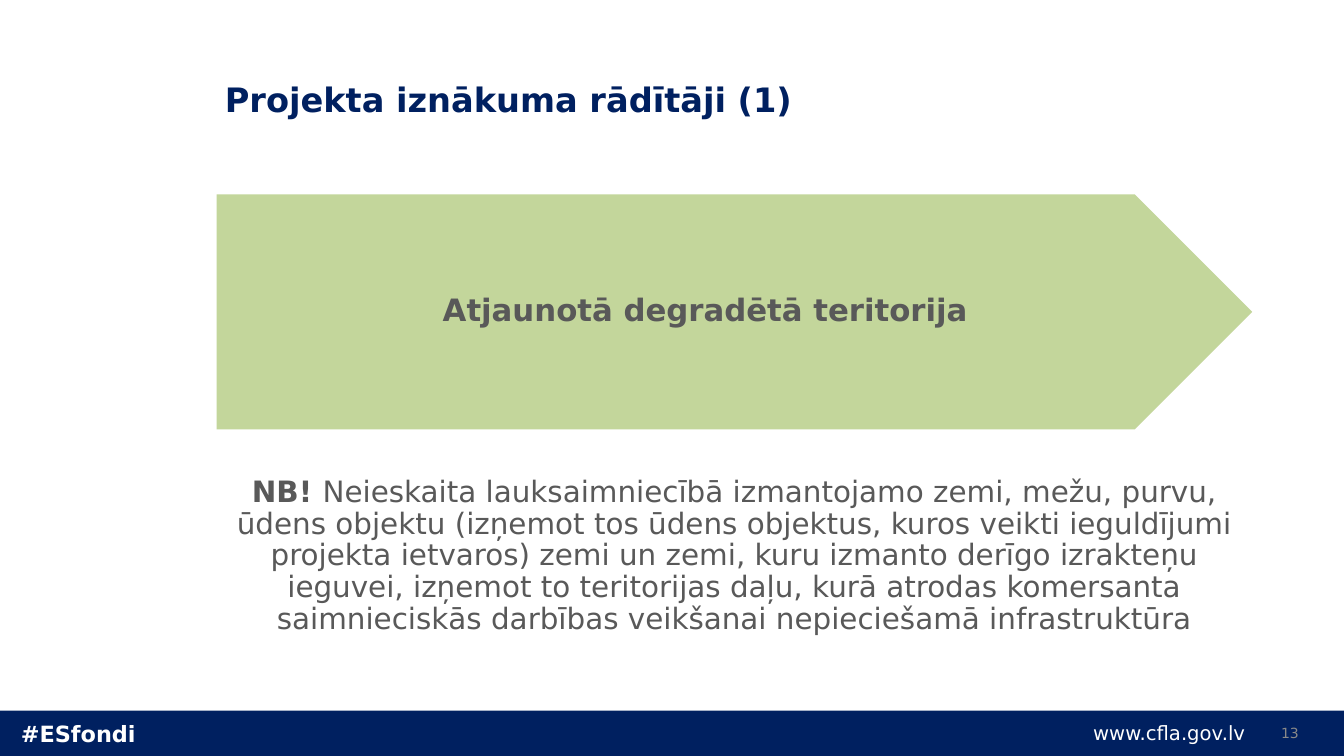
"""Build the slide on the project's output indicators."""
from dataclasses import dataclass

from pptx import Presentation
from pptx.dml.color import RGBColor
from pptx.enum.shapes import MSO_SHAPE as Shape
from pptx.enum.text import MSO_ANCHOR as Anchor, MSO_AUTO_SIZE as AutoSize, PP_ALIGN as Align
from pptx.util import Inches, Pt

FONT = "DejaVu Sans"
NAVY, GREEN, WHITE = "002060", "C3D69B", "FFFFFF"
DARK_GREY, LIGHT_GREY = "595959", "898989"
NOTE = (
    "Neieskaita lauksaimniecībā izmantojamo zemi, mežu, purvu, ūdens objektu "
    "(izņemot tos ūdens objektus, kuros veikti ieguldījumi projekta ietvaros) "
    "zemi un zemi, kuru izmanto derīgo izrakteņu ieguvei, izņemot to teritorijas "
    "daļu, kurā atrodas komersanta saimnieciskās darbības veikšanai "
    "nepieciešamā infrastruktūra"
)


@dataclass(frozen=True)
class Box:
    """Position and size in inches."""
    left: float
    top: float
    width: float
    height: float

    def emu(self) -> tuple:
        """Return the four lengths for python-pptx."""
        return tuple(Inches(v) for v in (self.left, self.top, self.width, self.height))


@dataclass(frozen=True)
class Panel:
    """A preset shape with its text runs as (text, bold) pairs."""
    preset: Shape
    box: Box
    fill: str | None
    size: float
    runs: tuple


@dataclass(frozen=True)
class Label:
    """A short line of text in the footer."""
    text: str
    box: Box
    size: float
    color: str
    bold: bool = False
    align: Align = Align.RIGHT
    anchor: Anchor = Anchor.MIDDLE


PANELS = (
    Panel(Shape.PENTAGON, Box(2.15, 1.93, 10.27, 2.33), GREEN, 22,
          (("Atjaunotā degradētā teritorija", True),)),
    Panel(Shape.ROUNDED_RECTANGLE, Box(2.13, 4.34, 10.31, 2.36), None, 21,
          (("NB! ", True), (NOTE, False))),
)
LABELS = (
    Label("www.cfla.gov.lv", Box(10.42, 7.1, 2.03, 0.33), 14, WHITE),
    Label("#ESfondi", Box(0.11, 7.13, 2.03, 0.33), 16, WHITE, True, Align.LEFT, Anchor.TOP),
    Label("13", Box(12.54, 7.11, 0.44, 0.33), 10, LIGHT_GREY),
)


def rgb(color: str) -> RGBColor:
    """Turn a hex string into a colour."""
    return RGBColor.from_string(color)


def write(frame, *runs: tuple, size: float, color: str, align: Align = Align.LEFT,
          anchor: Anchor = Anchor.MIDDLE, spacing: float = 1.0, inset: float | None = None) -> None:
    """Fill a text frame with one formatted paragraph."""
    frame.word_wrap = True
    frame.auto_size = AutoSize.NONE
    frame.vertical_anchor = anchor
    if inset is not None:
        frame.margin_left = frame.margin_right = Inches(inset)
        frame.margin_top = frame.margin_bottom = Inches(inset)
    paragraph = frame.paragraphs[0]
    paragraph.alignment = align
    paragraph.line_spacing = spacing
    for text, bold in runs:
        run = paragraph.add_run()
        run.text = text
        run.font.name = FONT
        run.font.size = Pt(size)
        run.font.bold = bold
        run.font.color.rgb = rgb(color)


def add_preset(slide, preset: Shape, box: Box, fill: str | None):
    """Add a preset shape without outline or shadow."""
    shape = slide.shapes.add_shape(preset, *box.emu())
    shape.shadow.inherit = False
    shape.line.fill.background()
    if fill:
        shape.fill.solid()
        shape.fill.fore_color.rgb = rgb(fill)
    else:
        shape.fill.background()
    return shape


def add_panel(slide, panel: Panel) -> None:
    """Draw a panel with its centred text."""
    shape = add_preset(slide, panel.preset, panel.box, panel.fill)
    write(shape.text_frame, *panel.runs, size=panel.size, color=DARK_GREY,
          align=Align.CENTER, spacing=0.9, inset=0.09)


def add_label(slide, label: Label) -> None:
    """Draw a footer label."""
    frame = slide.shapes.add_textbox(*label.box.emu()).text_frame
    write(frame, (label.text, label.bold), size=label.size, color=label.color,
          align=label.align, anchor=label.anchor,
          spacing=0.9 if label.anchor == Anchor.TOP else 1.0)


def main() -> None:
    """Build and save the presentation."""
    deck = Presentation()
    deck.slide_width, deck.slide_height = Inches(13.33), Inches(7.5)
    slide = deck.slides.add_slide(deck.slide_layouts[5])

    heading = slide.shapes.title
    heading.left, heading.top, heading.width, heading.height = Box(2.13, 0.42, 10.31, 1.13).emu()
    write(heading.text_frame, ("Projekta iznākuma rādītāji (1)", True), size=24, color=NAVY)

    add_preset(slide, Shape.RECTANGLE, Box(0, 7.05, 13.33, 0.45), NAVY)
    for label in LABELS:
        add_label(slide, label)
    for panel in PANELS:
        add_panel(slide, panel)
    deck.save("out.pptx")


if __name__ == "__main__":
    main()
